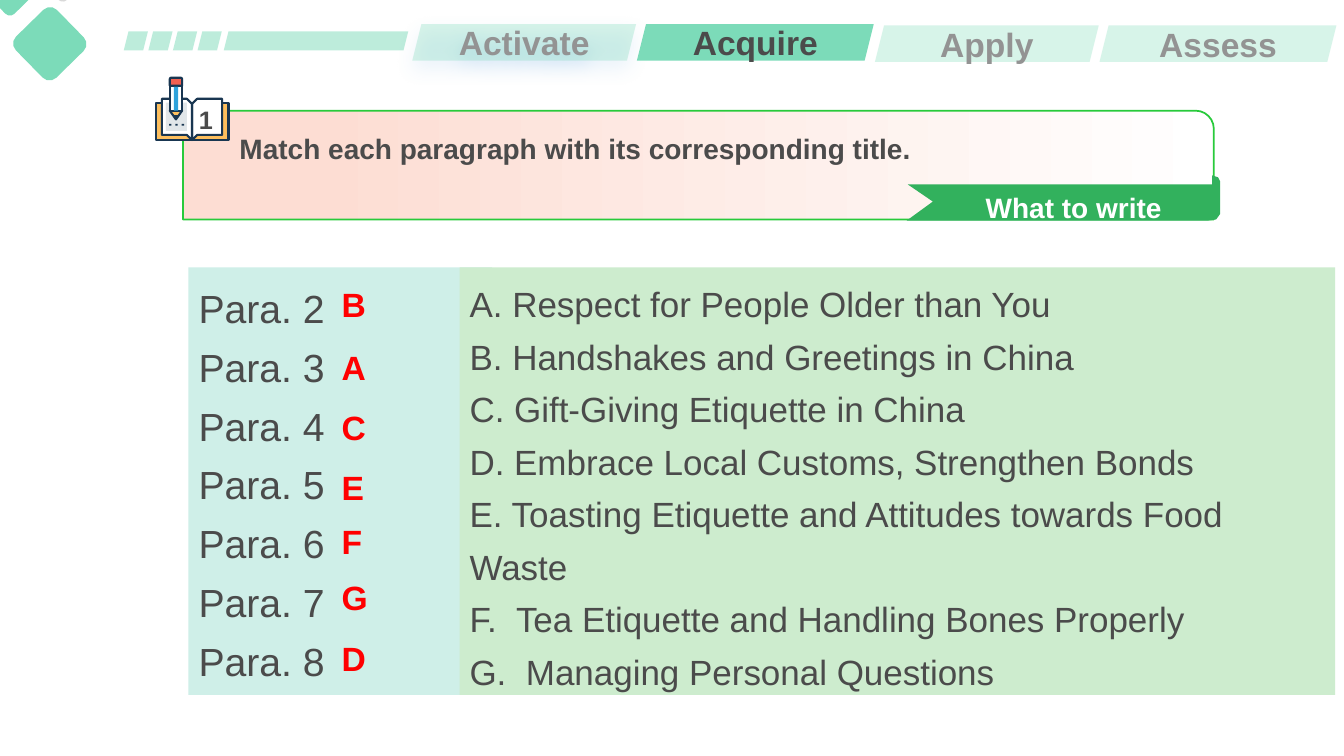
import lxml.etree
import pptx
import pptx.dml.color
import pptx.enum.shapes
import pptx.enum.text
import pptx.oxml.ns
import pptx.util

Cm = pptx.util.Cm
Pt = pptx.util.Pt
qn = pptx.oxml.ns.qn
MSO = pptx.enum.shapes.MSO_SHAPE
ALIGN = pptx.enum.text.PP_ALIGN
ANCHOR = pptx.enum.text.MSO_ANCHOR

COLORS = {
    "mint": "7CDBB9", "gray": "D9D9D9", "faded": "939393", "text": "4B4B4B",
    "glow": "61A3DE", "white": "FFFFFF", "pink": "FDDDD3", "edge": "28CA3B",
    "ribbon": "32B15D", "paras": "CFEFE8", "titles": "CDECCE", "red": "FF0000",
    "navy": "193651", "amber": "FDBF5E", "sketch": "E1E6E9", "blue": "2EA2DB",
    "eraser": "F16051",
}


def rgb(name):
    """Return the named colour."""
    return pptx.dml.color.RGBColor.from_string(COLORS[name])


def paint(sp, fill, line=None, weight=1.5, alpha=None):
    """Set fill, outline and opacity of a shape without shadow."""
    sp.shadow.inherit = False
    sp.fill.solid()
    sp.fill.fore_color.rgb = rgb(fill)
    if alpha:
        color = next(sp.element.spPr.iter(qn("a:srgbClr")))
        lxml.etree.SubElement(color, qn("a:alpha"), val=str(alpha * 1000))
    if line:
        sp.line.color.rgb = rgb(line)
        sp.line.width = Pt(weight)
    else:
        sp.line.fill.background()
    return sp


def preset(s, kind, box, fill, **style):
    """Add a painted preset shape in a box given in centimetres."""
    return paint(s.shapes.add_shape(kind, *map(Cm, box)), fill, **style)


def outline(s, x, y, points, fill, **style):
    """Add a painted polygon whose points are relative to x, y."""
    pts = [(Cm(x + dx), Cm(y + dy)) for dx, dy in points]
    builder = s.shapes.build_freeform(*pts[0])
    builder.add_line_segments(pts[1:], close=True)
    return paint(builder.convert_to_shape(), fill, **style)


def write(sp, lines, size, color="text", bold=False, anchor=ANCHOR.TOP,
          align=ALIGN.LEFT, spacing=1.0, hangs=None):
    """Fill a shape with formatted paragraphs, some with a hanging indent."""
    tf = sp.text_frame
    frame = {"word_wrap": True, "vertical_anchor": anchor,
             "auto_size": pptx.enum.text.MSO_AUTO_SIZE.NONE}
    for key, value in frame.items():
        setattr(tf, key, value)
    for i, line in enumerate(lines):
        p = tf.add_paragraph() if i else tf.paragraphs[0]
        hang = Cm((hangs or {}).get(i, 0))
        pPr = p._p.get_or_add_pPr()
        pPr.set("marL", str(hang))
        pPr.set("indent", str(-hang))
        lxml.etree.SubElement(pPr, qn("a:buNone"))
        paragraph = {"alignment": align, "line_spacing": spacing,
                     "space_before": Pt(0), "space_after": Pt(0)}
        for key, value in paragraph.items():
            setattr(p, key, value)
        r = p.add_run()
        r.text = line
        for key, value in {"name": "Arial", "size": Pt(size), "bold": bold}.items():
            setattr(r.font, key, value)
        r.font.color.rgb = rgb(color)


def label(s, box, text, size, color="text"):
    """Add a bold one-line text box."""
    write(s.shapes.add_textbox(*map(Cm, box)), [text], size, color, bold=True)


def place(s, ph, box):
    """Move a placeholder into a box and bring it to the front."""
    for key, value in zip(("left", "top", "width", "height"), box):
        setattr(ph, key, Cm(value))
    s.shapes.element.append(ph.element)
    return ph


def corner(s):
    """Draw the rotated tiles and the row of slats."""
    tiles = [(0.53, 0.38, 1.45, "mint"), (-0.23, -0.71, 0.97, "mint"),
             (1.14, -0.97, 0.89, "gray")]
    for x, y, side, color in tiles:
        preset(s, MSO.ROUNDED_RECTANGLE, (x, y, side, side), color).rotation = 45.6
    slats = [(3.12 + 0.62 * i, 0.61) for i in range(4)] + [(5.64, 4.65)]
    for x, w in slats:
        preset(s, MSO.PARALLELOGRAM, (x, 0.79, w, 0.48), "mint", alpha=50)


def steps(s):
    """Draw the four step tabs with the second one active."""
    tabs = [("Activate", 10.39, 0.61, 5.64), ("Acquire", 16.05, 0.61, 5.97),
            ("Apply", 22.05, 0.64, 5.64), ("Assess", 27.71, 0.64, 5.97)]
    for name, x, y, w in tabs:
        active = name == "Acquire"
        sp = preset(s, MSO.PARALLELOGRAM, (x, y, w, 0.92), "mint",
                    alpha=None if active else 30)
        write(sp, [name], 24, "text" if active else "faded", True,
              ANCHOR.MIDDLE, ALIGN.CENTER)
        if name == "Activate":
            effects = sp.element.spPr.find(qn("a:effectLst"))
            glow = lxml.etree.SubElement(
                effects, qn("a:outerShdw"), blurRad=str(Pt(14)), dist=str(Pt(6)),
                dir="5400000", algn="t", rotWithShape="0")
            color = lxml.etree.SubElement(glow, qn("a:srgbClr"), val=COLORS["glow"])
            lxml.etree.SubElement(color, qn("a:alpha"), val="40000")


def book(s, x, y):
    """Draw the numbered book and pencil from its top left corner."""
    def part(kind, dx, dy, w, h, fill, line=None):
        preset(s, kind, (x + dx, y + dy, w, h), fill, line=line)

    part(MSO.RECTANGLE, 0.03, 0.66, 1.83, 0.94, "amber", "navy")
    for side in (1, -1):
        page = [(0, 0.69), (0.13, 0.56), (0.76, 0.56), (0.76, 1.47),
                (0.13, 1.47), (0, 1.6)]
        outline(s, x + 0.94, y, [(side * dx, dy) for dx, dy in page],
                "white", line="navy")
    part(MSO.RECTANGLE, 0.28, 0.66, 0.53, 0.71, "sketch")
    for i in range(3):
        part(MSO.RECTANGLE, 0.36 + 0.16 * i, 1.19, 0.06, 0.05, "navy")
    part(MSO.FLOWCHART_MERGE, 0.38, 0.86, 0.31, 0.22, "amber", "navy")
    part(MSO.FLOWCHART_MERGE, 0.45, 0.97, 0.17, 0.12, "navy")
    part(MSO.RECTANGLE, 0.38, 0.23, 0.31, 0.63, "white", "navy")
    part(MSO.RECTANGLE, 0.48, 0.25, 0.11, 0.61, "blue")
    part(MSO.ROUND_2_SAME_RECTANGLE, 0.38, 0.03, 0.31, 0.2, "eraser", "navy")
    label(s, (x + 0.86, y + 0.57, 0.91, 1.02), "1", 18)


def banner(s, x, y, w, h):
    """Draw the task banner with its title, icon and ribbon."""
    sp = preset(s, MSO.ROUND_2_SAME_RECTANGLE, (x, y, w, h), "pink",
                line="edge", weight=1.25)
    sp.fill.gradient()
    sp.fill.gradient_angle = 180
    for stop, at, color in zip(sp.fill.gradient_stops, (0, 0.87), ("white", "pink")):
        stop.position = at
        stop.color.rgb = rgb(color)
    book(s, x - 0.71, y - 0.86)
    title = place(s, s.shapes.title, (x + 1.17, y - 0.02, 24.84, 1.52))
    write(title, ["Match each paragraph with its corresponding title."], 20,
          bold=True, spacing=1.5)
    ribbon = [(0.03, 0.23), (0.66, 0.66), (0, 1.14), (7.59, 1.14), (7.8, 1.11),
              (7.9, 0.97), (7.9, 0.15), (7.85, 0.05), (7.7, 0), (7.7, 0.23)]
    outline(s, x + 18.24, y + 1.63, ribbon, "ribbon")
    label(s, (x + 19.98, y + 1.88, 6.2, 1.12), "What to write", 20, "white")


def matching(s, x, y, h):
    """Place the two lists side by side with the answers between them."""
    paras, titles = [ph for ph in s.placeholders if ph.placeholder_format.idx]
    lists = [
        (paras, x, 7.65, "paras", 28, [f"Para. {n}" for n in range(2, 9)], None),
        (titles, x + 6.83, 22.07, "titles", 25, [
            "A. Respect for People Older than You",
            "B. Handshakes and Greetings in China",
            "C. Gift-Giving Etiquette in China",
            "D. Embrace Local Customs, Strengthen Bonds",
            "E. Toasting Etiquette and Attitudes towards Food Waste",
            "F.\tTea Etiquette and Handling Bones Properly",
            "G.\tManaging Personal Questions"], {5: 1.17, 6: 1.42}),
    ]
    for ph, left, w, fill, size, lines, hangs in lists:
        place(s, ph, (left, y, w, h))
        ph.fill.solid()
        ph.fill.fore_color.rgb = rgb(fill)
        write(ph, lines, size, spacing=1.25, hangs=hangs)
    for letter, dy in zip("BACEFGD", (0.3, 1.88, 3.38, 4.91, 6.25, 7.68, 9.2)):
        label(s, (x + 3.61, y + dy, 1.55, 1.3), letter, 24, "red")


def main():
    """Build the slide and save it."""
    prs = pptx.Presentation()
    prs.slide_width, prs.slide_height = Cm(33.87), Cm(19.05)
    s = prs.slides.add_slide(prs.slide_layouts[3])
    corner(s)
    steps(s)
    banner(s, 4.61, 2.79, 25.98, 2.74)
    matching(s, 4.75, 6.74, 10.77)
    prs.save("out.pptx")


if __name__ == "__main__":
    main()
